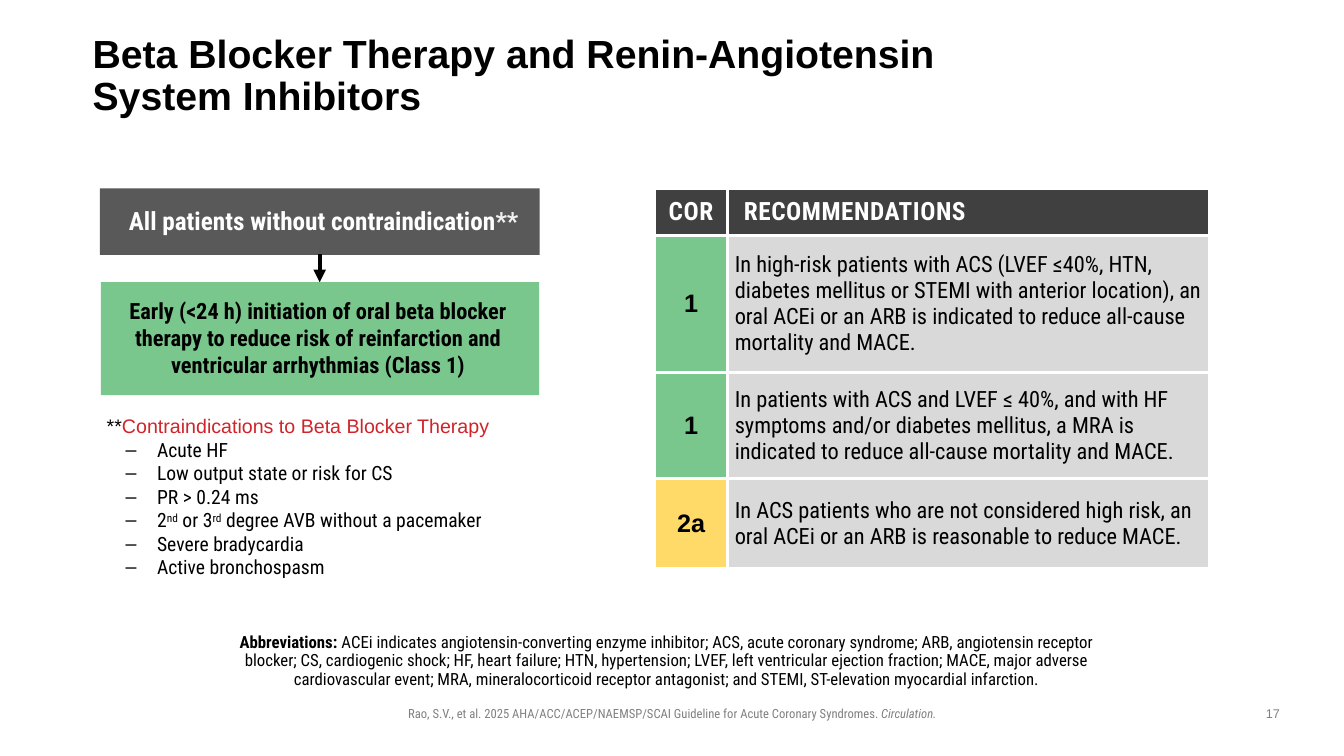
from lxml.etree import SubElement
from pptx import Presentation
from pptx.dml.color import RGBColor
from pptx.enum.shapes import MSO_CONNECTOR, MSO_SHAPE
from pptx.enum.text import MSO_ANCHOR, PP_ALIGN
from pptx.oxml.ns import qn
from pptx.util import Pt

HUES = {
    "black": "000000", "white": "FFFFFF", "pale": "F2F2F2", "grey": "808080",
    "dark": "404040", "slate": "595959", "light": "D9D9D9",
    "green": "79C78D", "gold": "FFDA68", "red": "CF2429",
}
ROBOTO = "Roboto Condensed"
ARIAL = "Arial"
MID = PP_ALIGN.CENTER

ADVICE = [
    ("1", "green", 97.9,
     "In high-risk patients with ACS (LVEF ≤40%, HTN, diabetes mellitus or STEMI "
     "with anterior location), an oral ACEi or an ARB is indicated to reduce "
     "all-cause mortality and MACE."),
    ("1", "green", 75.6,
     "In patients with ACS and LVEF ≤ 40%, and with HF symptoms and/or diabetes "
     "mellitus, a MRA is indicated to reduce all-cause mortality and MACE."),
    ("2a", "gold", 64.1,
     "In ACS patients who are not considered high risk, an oral ACEi or an ARB "
     "is reasonable to reduce MACE."),
]
RISKS = [
    ["Acute HF"],
    ["Low output state or risk for CS"],
    ["PR > 0.24 ms"],
    ["2", "nd", " or 3", "rd", " degree AVB without a pacemaker"],
    ["Severe bradycardia"],
    ["Active bronchospasm"],
]
TERMS = (
    "ACEi indicates angiotensin-converting enzyme inhibitor; ACS, acute coronary "
    "syndrome; ARB, angiotensin receptor blocker; CS, cardiogenic shock; HF, heart "
    "failure; HTN, hypertension; LVEF, left ventricular ejection fraction; MACE, "
    "major adverse cardiovascular event; MRA, mineralocorticoid receptor antagonist; "
    "and STEMI, ST-elevation myocardial infarction."
)


def tint(name):
    return RGBColor.from_string(HUES[name])


def add_run(para, text, size, face=ROBOTO, hue="black", bold=False,
            slant=False, track=0, raised=False):
    run = para.add_run()
    run.text = text
    font = run.font
    font.size, font.name = Pt(size), face
    font.bold, font.italic = bold, slant
    font.color.rgb = tint(hue)
    props = run._r.get_or_add_rPr()
    if track:
        props.set("spc", str(int(track * 100)))
    if raised:
        props.set("baseline", "30000")


def indent(para, left, first=0):
    props = para._p.get_or_add_pPr()
    props.set("marL", str(Pt(left)))
    props.set("indent", str(Pt(first)))
    return props


def add_text(slide, left, top, width, height, pad=(7.2, 3.6, 7.2, 3.6),
             anchor=MSO_ANCHOR.TOP, align=PP_ALIGN.LEFT, pitch=1.0):
    box = slide.shapes.add_textbox(Pt(left), Pt(top), Pt(width), Pt(height))
    frame = box.text_frame
    frame.word_wrap = True
    frame.vertical_anchor = anchor
    frame.margin_left, frame.margin_top, frame.margin_right, frame.margin_bottom = map(Pt, pad)
    para = frame.paragraphs[0]
    para.alignment, para.line_spacing = align, pitch
    return frame


def add_block(slide, left, top, width, height, hue):
    block = slide.shapes.add_shape(
        MSO_SHAPE.RECTANGLE, Pt(left), Pt(top), Pt(width), Pt(height))
    block.shadow.inherit = False
    block.fill.solid()
    block.fill.fore_color.rgb = tint(hue)
    block.line.fill.background()


def add_arrow(slide, x, top, end):
    arrow = slide.shapes.add_connector(
        MSO_CONNECTOR.STRAIGHT, Pt(x), Pt(top), Pt(x), Pt(end))
    arrow.line.color.rgb = tint("black")
    arrow.line.width = Pt(3)
    SubElement(arrow.line._get_or_add_ln(), qn("a:tailEnd"), type="triangle")
    SubElement(arrow._element.spPr, qn("a:effectLst"))


def style_cell(cell, hue, pad=None):
    props = cell._tc.get_or_add_tcPr()
    for side in ("lnL", "lnR", "lnT", "lnB"):
        edge = SubElement(props, qn("a:" + side), w=str(Pt(2.25)))
        fill = SubElement(edge, qn("a:solidFill"))
        SubElement(fill, qn("a:srgbClr"), val=HUES["white"])
    cell.fill.solid()
    cell.fill.fore_color.rgb = tint(hue)
    cell.vertical_anchor = MSO_ANCHOR.MIDDLE
    if pad:
        cell.margin_left = cell.margin_right = Pt(pad)
        cell.margin_top = cell.margin_bottom = Pt(pad)
    return cell.text_frame.paragraphs[0]


def add_grid(slide):
    grid = slide.shapes.add_table(
        len(ADVICE) + 1, 2, Pt(467.3), Pt(134.6), Pt(396.7), Pt(271.4)).table
    grid.horz_banding = False
    for col, width in zip(grid.columns, (52.6, 344.1)):
        col.width = Pt(width)
    grid.rows[0].height = Pt(33.8)
    para = style_cell(grid.cell(0, 0), "dark")
    para.alignment = MID
    add_run(para, "COR", 18, hue="white", bold=True, track=0.5)
    para = style_cell(grid.cell(0, 1), "dark")
    indent(para, 4.3)
    add_run(para, "RECOMMENDATIONS", 18, hue="white", bold=True, track=0.4)
    for row, (grade, hue, height, text) in enumerate(ADVICE, 1):
        grid.rows[row].height = Pt(height)
        para = style_cell(grid.cell(row, 0), hue, 3.6)
        para.alignment = MID
        add_run(para, grade, 18, ARIAL, bold=True)
        para = style_cell(grid.cell(row, 1), "light", 3.6)
        indent(para, 1.4)
        add_run(para, text, 16)


def add_risks(slide):
    frame = add_text(slide, 69.1, 292.3, 319.7, 126)
    para = frame.paragraphs[0]
    add_run(para, "**", 14, ARIAL)
    add_run(para, "Contraindications to Beta Blocker Therapy", 14, ARIAL, "red")
    for parts in RISKS:
        para = frame.add_paragraph()
        props = indent(para, 36, -22.5)
        SubElement(props, qn("a:buFont"), typeface=ARIAL)
        SubElement(props, qn("a:buChar"), char="–")
        for part in parts:
            add_run(para, part, 14, raised=part in ("nd", "rd"))


def add_flow(slide):
    add_block(slide, 71.4, 134.6, 314, 47.5, "slate")
    add_arrow(slide, 228.4, 181.6, 201.6)
    add_block(slide, 72, 201.6, 313.2, 80.6, "green")
    para = add_text(slide, 0, 143.3, 462.4, 28.8, align=MID).paragraphs[0]
    add_run(para, "All patients without contraindication", 18, hue="white", bold=True)
    add_run(para, "**", 18, hue="pale", bold=True)
    para = add_text(slide, 79.9, 208.8, 294.5, 65.5, align=MID).paragraphs[0]
    add_run(para, "Early (<24 h) initiation of oral beta blocker therapy to reduce "
            "risk of reinfarction and ventricular arrhythmias (Class 1)", 16, bold=True)


def add_notes(slide):
    para = add_text(slide, 162.7, 446.4, 634.3, 49, (0, 3.6, 7.2, 3.6),
                    MSO_ANCHOR.BOTTOM, MID, 0.9).paragraphs[0]
    add_run(para, "Abbreviations: ", 12, bold=True)
    add_run(para, TERMS, 12)
    para = add_text(slide, 169.9, 500.4, 620.6, 18, align=MID).paragraphs[0]
    add_run(para, "Rao, S.V., et al. 2025 AHA/ACC/ACEP/NAEMSP/SCAI Guideline for "
            "Acute Coronary Syndromes. ", 9, hue="grey")
    add_run(para, "Circulation.", 9, hue="grey", slant=True)
    para = add_text(slide, 894.2, 500.4, 30.2, 18.7, align=MID).paragraphs[0]
    add_run(para, "17", 9, ARIAL, "grey")


def main():
    deck = Presentation()
    deck.slide_width, deck.slide_height = Pt(960), Pt(540)
    slide = deck.slides.add_slide(deck.slide_layouts[6])
    title = add_text(slide, 66.2, 28.8, 617.8, 51.8, (0, 0, 0, 0),
                     MSO_ANCHOR.MIDDLE, pitch=0.9)
    add_run(title.paragraphs[0], "Beta Blocker Therapy and Renin-Angiotensin "
            "System Inhibitors", 28, ARIAL, bold=True)
    add_flow(slide)
    add_grid(slide)
    add_risks(slide)
    add_notes(slide)
    deck.save("out.pptx")


if __name__ == "__main__":
    main()
